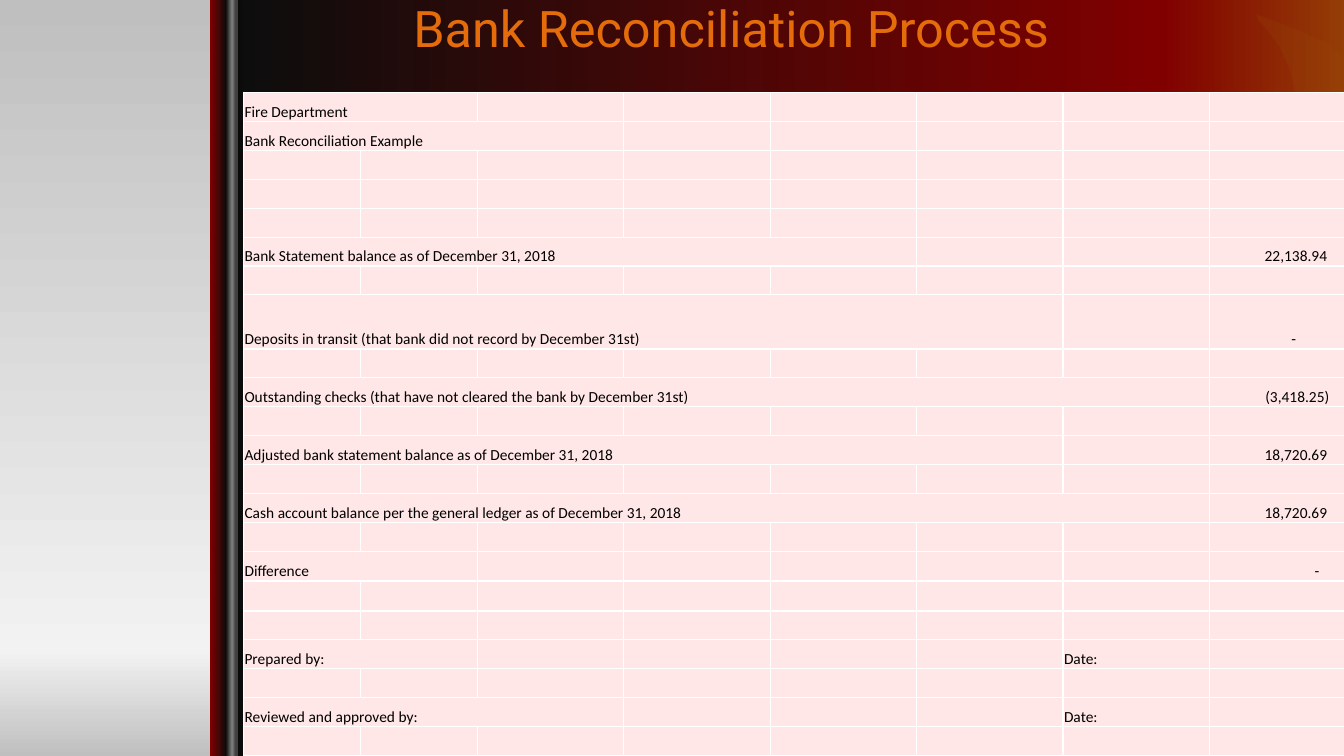
from dataclasses import dataclass
from typing import NamedTuple

from lxml import etree
from pptx import Presentation
from pptx.dml.color import RGBColor
from pptx.enum import shapes, text
from pptx.oxml.ns import qn
from pptx.util import Pt


@dataclass(frozen=True)
class Theme:
    head: str = "E46C0A"
    ink: str = "000000"
    cell: str = "FFE7E7"
    rule: str = "FFFFFF"
    amber: str = "984807"
    red: str = "800000"
    black: str = "0D0D0D"
    head_font: str = "Roboto"
    body_font: str = "Calibri"
    head_size: float = 36
    body_size: float = 11


T = Theme()


class Stop(NamedTuple):
    pos: int
    color: str
    alpha: int = 100


class Bar(NamedTuple):
    left: float
    top: float
    width: float
    height: float
    turn: int
    angle: int
    stops: list[Stop]


class Entry(NamedTuple):
    row: int
    label: str
    span: int
    col: int = 7
    value: str = ""
    indent: float = 0  # nudges a centred amount to the right


BACK = [Stop(0, "BFBFBF"), Stop(86, "F2F2F2"), Stop(100, "BFBFBF")]
PANEL = Bar(301, -137, 552, 814, 90, 90,
            [Stop(0, T.amber), Stop(19, T.red), Stop(100, T.black)])
EDGE = Bar(150, -6, 13.5, 552, 180, 0,
           [Stop(0, T.amber), Stop(13, T.black), Stop(100, T.red)])
ROD = Bar(161.5, -6, 8.5, 552, 0, 0,
          [Stop(0, T.black), Stop(51, "808080"), Stop(81, "404040")])
GLOW = [Stop(22, T.amber, 21), Stop(63, T.red, 21), Stop(100, T.black, 18)]

# Flame outline: a start point, then two controls and an end for each curve
FLAME = [
    (936, 546), (1017, 546), (1101, 513), (1130, 462),
    (1158, 411), (1153, 410), (1140, 425), (1128, 440), (1102, 451), (1102, 451),
    (1102, 451), (1142, 411), (1147, 377), (1153, 342), (1133, 259), (1122, 245),
    (1112, 230), (1107, 217), (1109, 248), (1112, 279), (1089, 317), (1082, 328),
    (1075, 340), (1082, 325), (1087, 295), (1093, 266), (1086, 188), (1063, 154),
    (1040, 120), (1030, 94), (1030, 116), (1030, 138), (1027, 150), (1027, 150),
    (1027, 150), (995, 48), (933, 24), (870, 0), (906, 12), (919, 45),
    (933, 77), (922, 125), (910, 147), (898, 168), (877, 217), (878, 233),
    (880, 249), (875, 191), (865, 176), (855, 161), (842, 152), (842, 152),
    (842, 152), (849, 163), (846, 182), (843, 202), (809, 234), (792, 251),
    (774, 268), (752, 299), (759, 322), (766, 345), (773, 365), (773, 365),
    (773, 365), (752, 354), (748, 338), (744, 323), (747, 305), (747, 305),
    (747, 305), (725, 328), (729, 352), (734, 377), (754, 418), (763, 424),
    (773, 431), (739, 422), (731, 410), (723, 399), (713, 380), (713, 380),
    (713, 380), (706, 424), (749, 465), (792, 506), (830, 546), (936, 546),
]

COLS = [83.5] * 2 + [104.6] * 5 + [119.5]
ROWS = [20.65] * 22
ROWS[7] = 38.6
ROWS[15] = ROWS[16] = 21.4

ENTRIES = [
    Entry(0, "Fire Department", 2),
    Entry(1, "Bank Reconciliation Example", 3),
    Entry(5, "Bank Statement balance as of December 31, 2018", 5, 7, "22,138.94", 4),
    Entry(7, "Deposits in transit (that bank did not record by December 31st)",
          6, 7, "-", 1),
    Entry(9, "Outstanding checks (that have not cleared the bank by December 31st)",
          7, 7, "(3,418.25)", 6),
    Entry(11, "Adjusted bank statement balance as of December 31, 2018",
          6, 7, "18,720.69", 4),
    Entry(13, "Cash account balance per the general ledger as of December 31, 2018",
          7, 7, "18,720.69", 4),
    Entry(15, "Difference", 2, 7, "-", 34),
    Entry(18, "Prepared by:", 2, 6, "Date:"),
    Entry(20, "Reviewed and approved by:", 3, 6, "Date:"),
]


def add(node, tag: str, **attrs):
    return etree.SubElement(node, qn(tag), {k: str(v) for k, v in attrs.items()})


def tint(node, color: str, alpha: int = 100) -> None:
    clr = add(node, "a:srgbClr", val=color)
    if alpha < 100:
        add(clr, "a:alpha", val=alpha * 1000)


def shade(fill, node, stops: list[Stop], angle: int) -> None:
    """Give a fill a linear gradient; the angle runs clockwise."""
    fill.gradient()
    fill.gradient_angle = -angle % 360
    box = next(node.iter(qn("a:gsLst")))
    for old in list(box):
        box.remove(old)
    for stop in stops:
        tint(add(box, "a:gs", pos=stop.pos * 1000), stop.color, stop.alpha)


def finish(shape, stops: list[Stop], angle: int) -> None:
    shape.shadow.inherit = False
    shape.line.fill.background()
    shade(shape.fill, shape.element, stops, angle)


def draw_bar(slide, bar: Bar):
    shape = slide.shapes.add_shape(
        shapes.MSO_SHAPE.RECTANGLE, *map(Pt, (bar.left, bar.top, bar.width, bar.height)))
    shape.rotation = bar.turn
    finish(shape, bar.stops, bar.angle)
    return shape


def draw_flame(slide) -> None:
    """Lay out the points as lines, then join each three into one curve."""
    start, *rest = [(Pt(x), Pt(y)) for x, y in FLAME]
    pen = slide.shapes.build_freeform(*start)
    pen.add_line_segments(rest, close=True)
    shape = pen.convert_to_shape()
    lines = list(shape.element.iter(qn("a:lnTo")))[:len(rest)]
    for i in range(0, len(lines), 3):
        curve = etree.Element(qn("a:cubicBezTo"))
        lines[i].addprevious(curve)
        for line in lines[i:i + 3]:
            curve.append(line[0])
            line.getparent().remove(line)
    finish(shape, GLOW, 90)


def draw_title(slide) -> None:
    title = slide.shapes.title
    title.element.getparent().append(title.element)
    title.left, title.top, title.width, title.height = map(Pt, (288, 3.6, 688, 41))
    frame = title.text_frame
    frame.text = "Bank Reconciliation Process"
    frame.auto_size = text.MSO_AUTO_SIZE.NONE
    frame.vertical_anchor = text.MSO_ANCHOR.BOTTOM
    para = frame.paragraphs[0]
    para.alignment = text.PP_ALIGN.LEFT
    font = para.runs[0].font
    font.name, font.size = T.head_font, Pt(T.head_size)
    font.color.rgb = RGBColor.from_string(T.head)


def style_cell(cell) -> None:
    cell.margin_left = cell.margin_right = cell.margin_top = Pt(0.7)
    cell.margin_bottom = 0
    cell.vertical_anchor = text.MSO_ANCHOR.BOTTOM
    props = cell._tc.get_or_add_tcPr()
    for side in "LRTB":
        line = add(props, f"a:ln{side}", w=Pt(1))
        tint(add(line, "a:solidFill"), T.rule)
    cell.fill.solid()
    cell.fill.fore_color.rgb = RGBColor.from_string(T.cell)
    add(cell.text_frame.paragraphs[0]._p, "a:endParaRPr", sz=int(T.body_size * 100))


def write(cell, words: str) -> None:
    cell.text_frame.text = words
    for run in cell.text_frame.paragraphs[0].runs:
        run.font.name, run.font.size = T.body_font, Pt(T.body_size)
        run.font.color.rgb = RGBColor.from_string(T.ink)


def draw_table(slide) -> None:
    table = slide.shapes.add_table(len(ROWS), len(COLS), Pt(174), Pt(66.2),
                                   Pt(sum(COLS)), Pt(sum(ROWS))).table
    table.first_row = table.horz_banding = False
    for col, width in zip(table.columns, COLS):
        col.width = Pt(width)
    for row, height in zip(table.rows, ROWS):
        row.height = Pt(height)
    for cell in table.iter_cells():
        style_cell(cell)
    for item in ENTRIES:
        label = table.cell(item.row, 0)
        label.merge(table.cell(item.row, item.span - 1))
        write(label, item.label)
        if item.value:
            cell = table.cell(item.row, item.col)
            write(cell, item.value)
            if item.indent:
                cell.margin_left = Pt(0.7 + item.indent)
                cell.text_frame.paragraphs[0].alignment = text.PP_ALIGN.CENTER


def main() -> None:
    deck = Presentation()
    deck.slide_width, deck.slide_height = Pt(960), Pt(540)
    slide = deck.slides.add_slide(deck.slide_layouts[5])
    shade(slide.background.fill, slide.element, BACK, 90)
    draw_bar(slide, PANEL)
    draw_flame(slide)
    draw_bar(slide, EDGE)
    rod = draw_bar(slide, ROD)
    glow = next(rod.element.iter(qn("a:effectLst")))
    tint(add(glow, "a:outerShdw", blurRad=Pt(4), dist=Pt(3), dir=5400000), T.ink, 40)
    draw_title(slide)
    draw_table(slide)
    deck.save("out.pptx")


if __name__ == "__main__":
    main()
